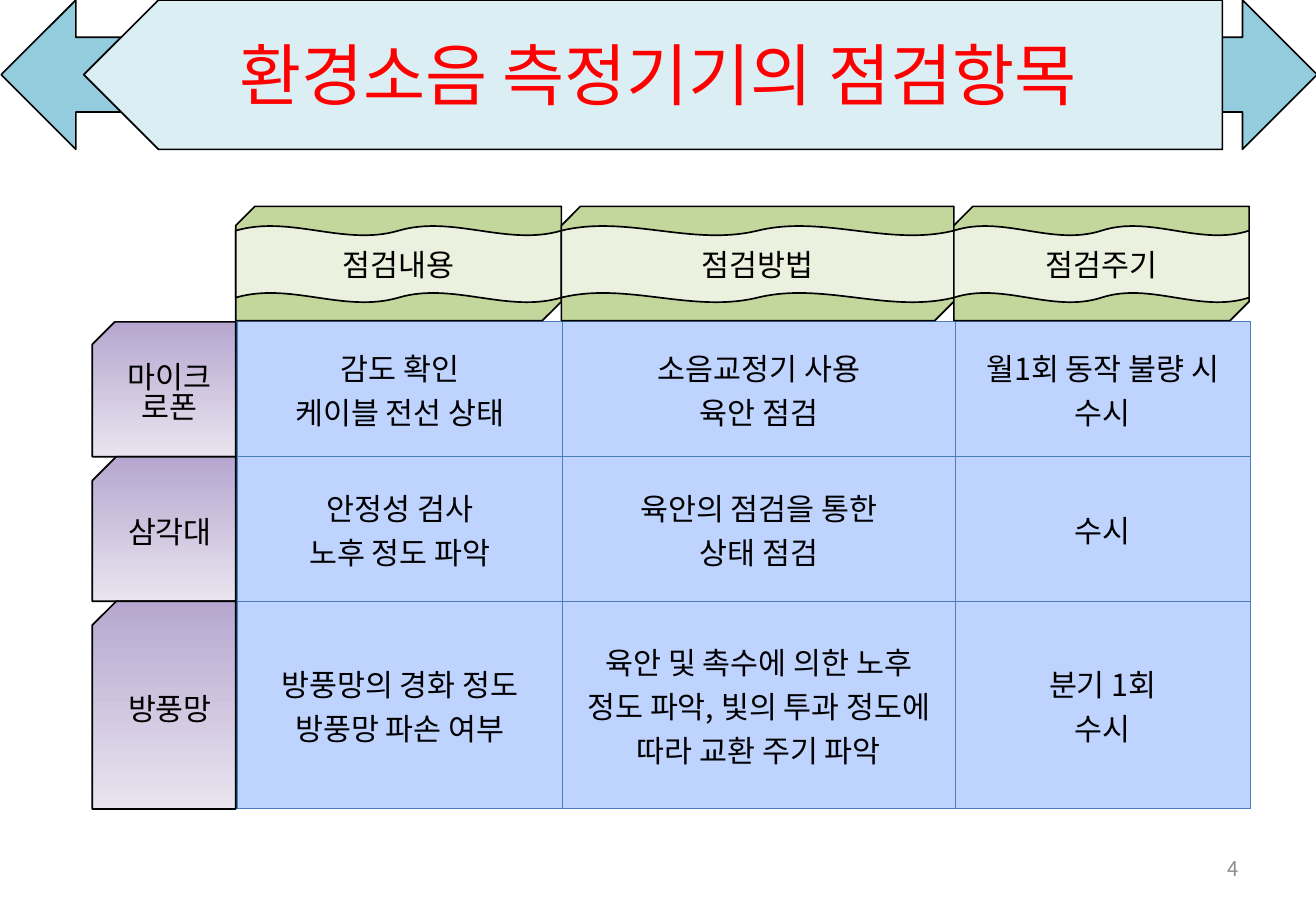
import pptx
import pptx.util
import pptx.dml.color
import pptx.enum.shapes
import pptx.enum.text
import pptx.oxml.ns
import lxml.etree

Inches = pptx.util.Inches
Pt = pptx.util.Pt
Kind = pptx.enum.shapes.MSO_SHAPE
Align = pptx.enum.text.PP_ALIGN
qn = pptx.oxml.ns.qn

COLORS = {
    "black": "000000", "red": "FF0000", "gray": "8C8C8C",
    "arrow": "93CDDD", "band": "DBEEF4", "green": "C3D69B",
    "wave": "EBF1DE", "top": "B7A7D0", "base": "E9E4EF",
    "cell": "BFD3FF", "edge": "4B7EBC",
}


def rgb(name):
    return pptx.dml.color.RGBColor.from_string(COLORS[name])


class Deck:
    face = "Noto Sans CJK KR"

    def __init__(self, wide, high):
        self.prs = pptx.Presentation()
        self.prs.slide_width = Inches(wide)
        self.prs.slide_height = Inches(high)
        self.slide = self.prs.slides.add_slide(self.prs.slide_layouts[5])

    def words(self, frame, text, size=18, color="black", align=Align.CENTER, space=None):
        frame.word_wrap = True
        frame.vertical_anchor = pptx.enum.text.MSO_ANCHOR.MIDDLE
        frame.text = text
        for para in frame.paragraphs:
            para.alignment = align
            if space:
                para.line_spacing = space
            font = para.font
            font.size = Pt(size)
            font.name = self.face
            font.color.rgb = rgb(color)
            # East Asian typeface for the Korean text
            props = para._p.find(qn("a:pPr")).find(qn("a:defRPr"))
            lxml.etree.SubElement(props, qn("a:ea"), typeface=self.face)

    def shape(self, kind, box, fill, flip=None, text=None, space=None):
        item = self.slide.shapes.add_shape(kind, *map(Inches, box))
        item.shadow.inherit = False
        if isinstance(fill, tuple):
            item.fill.gradient()
            item.fill.gradient_angle = 270
            for stop, name in zip(item.fill.gradient_stops, fill):
                stop.color.rgb = rgb(name)
        else:
            item.fill.solid()
            item.fill.fore_color.rgb = rgb(fill)
        item.line.color.rgb = rgb("black")
        item.line.width = Pt(1)
        if flip:
            item.element.spPr.find(qn("a:xfrm")).set(flip, "1")
        if text:
            self.words(item.text_frame, text, space=space)

    def title(self, text, box):
        head = self.slide.shapes.title
        head.left, head.top, head.width, head.height = map(Inches, box)
        self.words(head.text_frame, text, 40, "red")
        head.element.getparent().append(head.element)

    def label(self, text, box, size, color, align):
        item = self.slide.shapes.add_textbox(*map(Inches, box))
        self.words(item.text_frame, text, size, color, align)

    def edge(self, cell):
        props = cell._tc.get_or_add_tcPr()
        for spot, side in enumerate(("lnL", "lnR", "lnT", "lnB")):
            line = lxml.etree.Element(qn("a:" + side), w=str(Pt(0.75)))
            fill = lxml.etree.SubElement(line, qn("a:solidFill"))
            lxml.etree.SubElement(fill, qn("a:srgbClr"), val=COLORS["edge"])
            props.insert(spot, line)

    def table(self, rows, left, top, wides, highs):
        table = self.slide.shapes.add_table(
            len(highs), len(wides), Inches(left), Inches(top),
            Inches(sum(wides)), Inches(sum(highs))).table
        table.first_row = table.horz_banding = False
        for col, wide in zip(table.columns, wides):
            col.width = Inches(wide)
        for row, high, texts in zip(table.rows, highs, rows):
            row.height = Inches(high)
            for cell, text in zip(row.cells, texts):
                cell.fill.solid()
                cell.fill.fore_color.rgb = rgb("cell")
                self.edge(cell)
                self.words(cell.text_frame, text)
                cell.vertical_anchor = pptx.enum.text.MSO_ANCHOR.MIDDLE


HEADS = ["점검내용", "점검방법", "점검주기"]
PARTS = ["마이크로폰", "삼각대", "방풍망"]
CHECKS = [
    ["감도 확인\n케이블 전선 상태", "소음교정기 사용\n육안 점검",
     "월1회 동작 불량 시 수시"],
    ["안정성 검사\n노후 정도 파악", "육안의 점검을 통한\n상태 점검", "수시"],
    ["방풍망의 경화 정도\n방풍망 파손 여부",
     "육안 및 촉수에 의한 노후 정도 파악, 빛의 투과 정도에 따라 교환 주기 파악",
     "분기 1회\n수시"],
]
WIDES = [2.68, 3.23, 2.43]
HIGHS = [1.11, 1.19, 1.71]


def main():
    deck = Deck(10.83, 7.5)

    # Title banner
    deck.shape(Kind.LEFT_RIGHT_ARROW, (0.01, 0, 10.83, 1.23), "arrow")
    deck.shape(Kind.PENTAGON, (0.69, 0, 9.37, 1.23), "band", "flipH")
    deck.title("환경소음 측정기기의 점검항목", (0.54, -0.02, 9.75, 1.25))

    # Check table and page number
    deck.table(CHECKS, 1.95, 2.65, WIDES, HIGHS)
    deck.label("4", (7.76, 6.95, 2.53, 0.4), 12, "gray", Align.RIGHT)

    # Row labels
    top = 2.65
    for part, high in zip(PARTS, HIGHS):
        deck.shape(Kind.SNIP_1_RECTANGLE, (0.76, top, 1.18, high),
                   ("top", "base"), "flipH", part, 0.82)
        top += high

    # Column headers
    left = 1.94
    for head, wide in zip(HEADS, WIDES):
        deck.shape(Kind.SNIP_2_DIAG_RECTANGLE, (left, 1.7, wide, 0.94), "green", "flipV")
        deck.shape(Kind.DOUBLE_WAVE, (left, 1.86, wide, 0.63), "wave", text=head)
        left += wide

    deck.prs.save("out.pptx")


if __name__ == "__main__":
    main()
